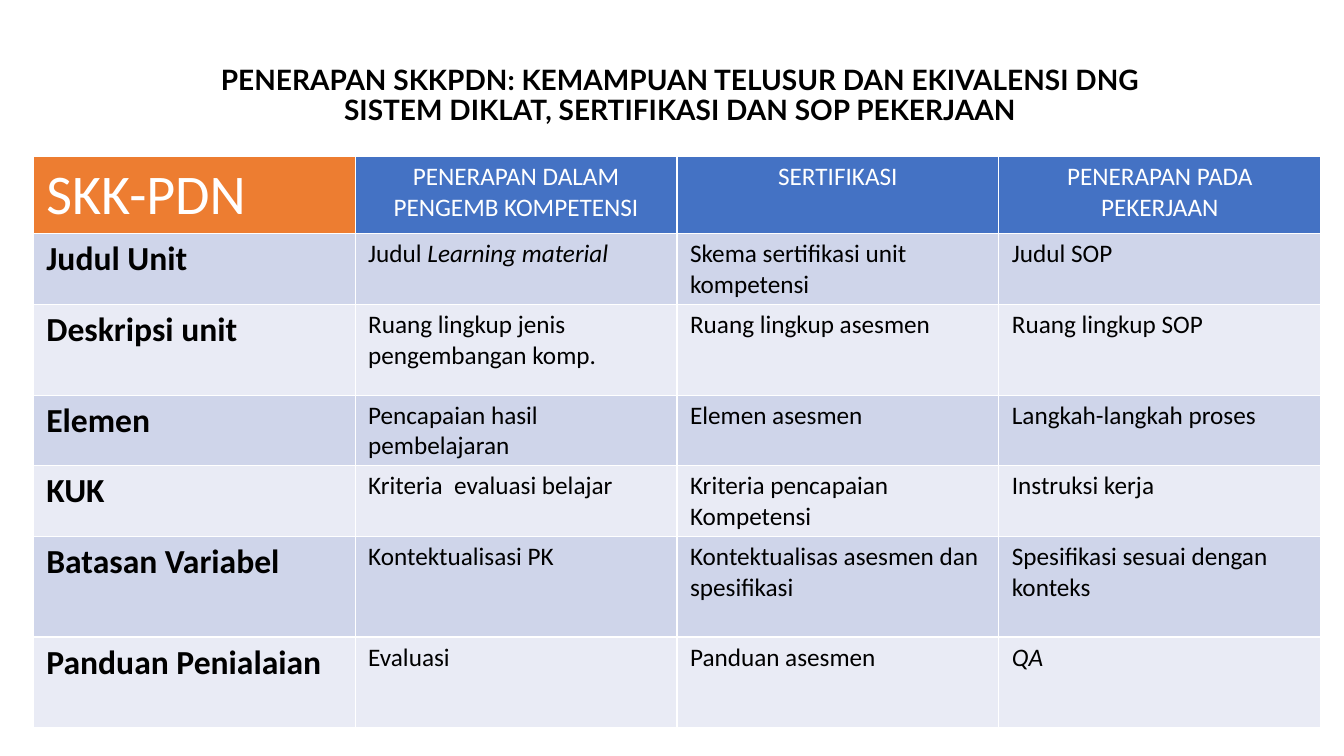
from dataclasses import dataclass

from lxml.etree import SubElement
from pptx import Presentation
from pptx.dml.color import RGBColor as Rgb
from pptx.enum.text import MSO_ANCHOR as Anchor, PP_ALIGN as Align
from pptx.oxml.ns import qn
from pptx.util import Inches, Pt


@dataclass(frozen=True)
class Theme:
    """Colours, fonts and sizes of the slide."""
    ink: str = "000000"
    paper: str = "FFFFFF"
    corner: str = "ED7D31"
    header: str = "4472C4"
    bands: tuple = ("CFD5EA", "E9EBF5")
    title_font: str = "Lato"
    table_font: str = "Calibri"
    title_size: int = 20
    corner_size: int = 40
    unit_size: int = 24
    body_size: int = 18
    border: int = 1


THEME = Theme()
HEADING = ("PENERAPAN SKKPDN: KEMAMPUAN TELUSUR DAN EKIVALENSI DNG "
           "SISTEM DIKLAT, SERTIFIKASI DAN SOP PEKERJAAN")
HEADING_BOX = (1.58, 0.64, 10.33, 0.63)
MATRIX_BOX = (0.33, 1.55, 12.77, 5.67)
ROW_HEIGHTS = (0.77, 0.7, 0.9, 0.7, 0.7, 1, 0.9)
MATRIX = (
    ("SKK-PDN", "PENERAPAN DALAM PENGEMB KOMPETENSI", "SERTIFIKASI",
     "PENERAPAN PADA PEKERJAAN"),
    ("Judul Unit", "Judul *Learning material*",
     "Skema sertifikasi unit kompetensi", "Judul SOP"),
    ("Deskripsi unit", "Ruang lingkup jenis pengembangan komp.",
     "Ruang lingkup asesmen", "Ruang lingkup SOP"),
    ("Elemen", "Pencapaian hasil pembelajaran", "Elemen asesmen",
     "Langkah-langkah proses"),
    ("KUK", "Kriteria  evaluasi belajar", "Kriteria pencapaian Kompetensi",
     "Instruksi kerja"),
    ("Batasan Variabel", "Kontektualisasi PK",
     "Kontektualisas asesmen dan spesifikasi",
     "Spesifikasi sesuai dengan konteks"),
    ("Panduan Penialaian", "Evaluasi", "Panduan asesmen", "*QA*"),
)


def apply_format(target, values):
    """Set each named value on the target."""
    for name, value in values.items():
        setattr(target, name, value)


def write(paragraph, wording, font, size, colour, bold=False):
    """Write the wording, with the parts between asterisks in italics."""
    for index, part in enumerate(wording.split("*")):
        if part:
            run = paragraph.add_run()
            run.text = part
            apply_format(run.font, {"name": font, "size": Pt(size),
                                    "bold": bold, "italic": index % 2 == 1})
            run.font.color.rgb = Rgb.from_string(colour)


def add_borders(cell):
    """Draw a thin line on all four sides of the cell."""
    properties = cell._tc.get_or_add_tcPr()
    for position, side in enumerate(("lnL", "lnR", "lnT", "lnB")):
        line = properties.makeelement(qn(f"a:{side}"), {"w": str(Pt(THEME.border))})
        fill = SubElement(line, qn("a:solidFill"))
        SubElement(fill, qn("a:srgbClr"), val=THEME.paper)
        properties.insert(position, line)


def cell_look(row, column):
    """Return the fill and the text format for a place in the matrix."""
    look = {"font": THEME.table_font, "size": THEME.body_size, "colour": THEME.ink}
    if row == 0:
        look["colour"] = THEME.paper
        if column == 0:
            look["size"] = THEME.corner_size
        return (THEME.header if column else THEME.corner), look
    if column == 0:
        look.update(size=THEME.unit_size, bold=True)
    return THEME.bands[(row - 1) % 2], look


def add_heading(slide, box):
    """Place the centred heading in the box."""
    frame = slide.shapes.add_textbox(*map(Inches, box)).text_frame
    apply_format(frame, {"word_wrap": True, "vertical_anchor": Anchor.MIDDLE})
    paragraph = frame.paragraphs[0]
    apply_format(paragraph, {"alignment": Align.CENTER, "line_spacing": 0.9})
    write(paragraph, HEADING, THEME.title_font, THEME.title_size, THEME.ink, True)


def add_matrix(slide, box):
    """Place the matrix of competency units in the box, with equal columns."""
    columns = len(MATRIX[0])
    table = slide.shapes.add_table(len(MATRIX), columns, *map(Inches, box)).table
    for column in table.columns:
        column.width = Inches(box[2] / columns)
    for row, height in zip(table.rows, ROW_HEIGHTS):
        row.height = Inches(box[3] * height / sum(ROW_HEIGHTS))
    for r, entries in enumerate(MATRIX):
        for c, wording in enumerate(entries):
            cell = table.cell(r, c)
            fill, look = cell_look(r, c)
            apply_format(cell, {"margin_left": Inches(0.13), "margin_right": Inches(0.13),
                                "margin_top": Inches(0.05), "margin_bottom": Inches(0.05)})
            cell.fill.solid()
            cell.fill.fore_color.rgb = Rgb.from_string(fill)
            add_borders(cell)
            paragraph = cell.text_frame.paragraphs[0]
            paragraph.alignment = Align.CENTER if r == 0 and c else Align.LEFT
            write(paragraph, wording, **look)


def main():
    """Build the slide and save it."""
    deck = Presentation()
    apply_format(deck, {"slide_width": Inches(13.33), "slide_height": Inches(7.5)})
    slide = deck.slides.add_slide(deck.slide_layouts[6])
    add_heading(slide, HEADING_BOX)
    add_matrix(slide, MATRIX_BOX)
    deck.save("out.pptx")


if __name__ == "__main__":
    main()
